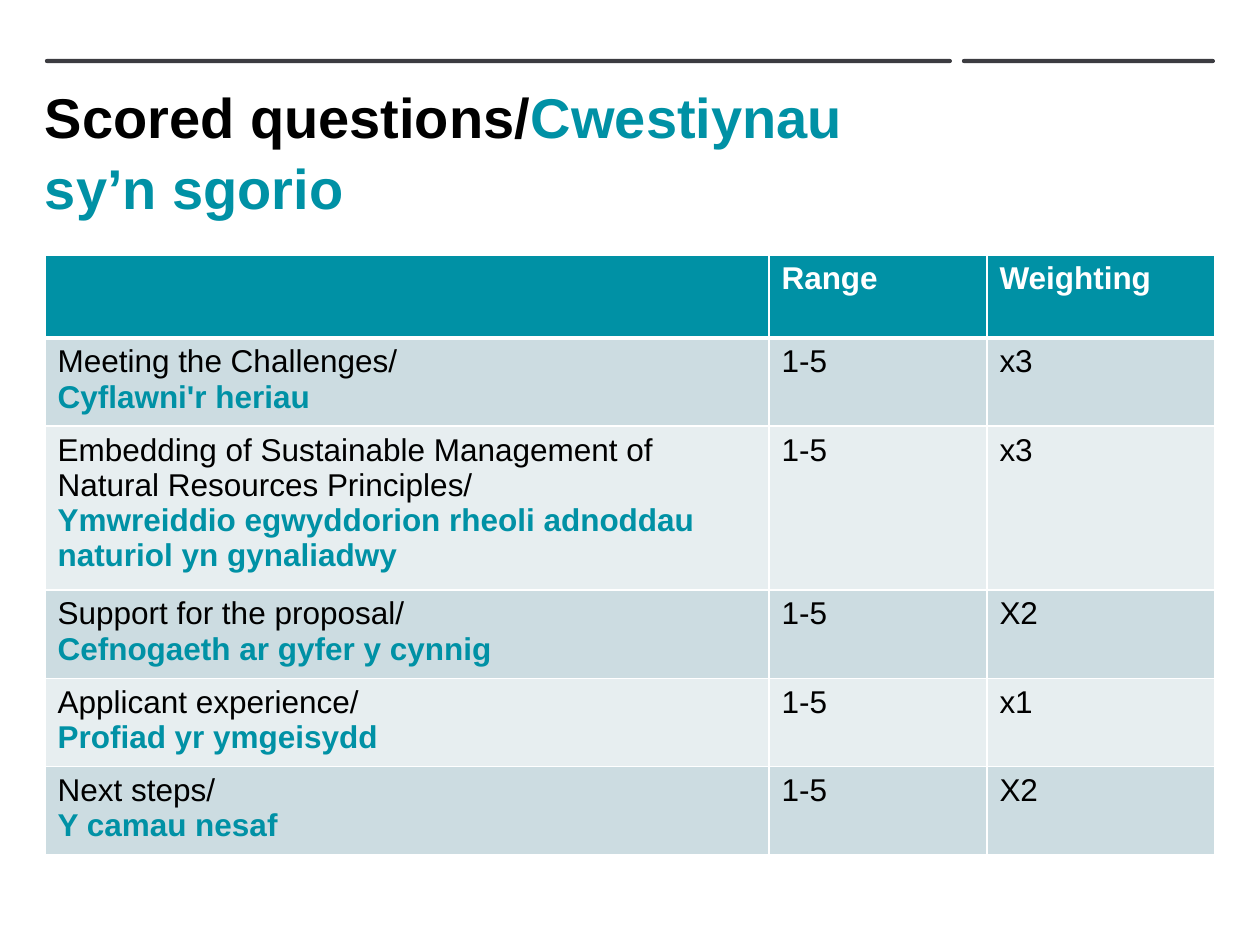
from dataclasses import dataclass

from lxml.etree import SubElement
from pptx import Presentation
from pptx.dml.color import RGBColor as RGB
from pptx.enum.shapes import MSO_SHAPE as Shape
from pptx.enum.text import MSO_ANCHOR as Anchor
from pptx.oxml.ns import qn
from pptx.util import Emu, Pt


@dataclass
class Theme:
    font = "Arial"
    title_size = Pt(32)
    table_size = Pt(18)
    teal = RGB(0x00, 0x91, 0xA5)
    black = RGB(0, 0, 0)
    white = RGB(0xFF, 0xFF, 0xFF)
    rule = RGB(0x3C, 0x3C, 0x41)
    bands = [RGB(0xCC, 0xDC, 0xE1), RGB(0xE7, 0xEE, 0xF0)]


theme = Theme()


def px(value):
    return Emu(round(value * 914400 / 126))


def style(span, size, color, bold):
    font = span.font
    font.name, font.size, font.bold = theme.font, size, bold
    font.color.rgb = color


deck = Presentation()
deck.slide_width, deck.slide_height = px(1260), px(945)
page = deck.slides.add_slide(deck.slide_layouts[6])

left = 45
for rule_left, rule_width in [(962, 253), (left, 907)]:
    rule = page.shapes.add_shape(
        Shape.ROUNDED_RECTANGLE, px(rule_left), px(59), px(rule_width), px(4))
    rule.adjustments[0] = 0.5
    rule.shadow.inherit = False
    rule.fill.solid()
    rule.fill.fore_color.rgb = theme.rule
    rule.line.fill.background()

box = page.shapes.add_textbox(px(left), px(66), px(907), px(168))
frame = box.text_frame
frame.word_wrap = True
frame.vertical_anchor = Anchor.MIDDLE
frame.margin_left = frame.margin_right = frame.margin_top = frame.margin_bottom = 0
para = frame.paragraphs[0]
para.line_spacing = 1.05
for text, color in [("Scored questions/", theme.black),
                    ("Cwestiynau sy’n sgorio", theme.teal)]:
    span = para.add_run()
    span.text = text
    style(span, theme.title_size, color, True)

rows = [
    ("", "Range", "Weighting"),
    ("Meeting the Challenges/\nCyflawni'r heriau", "1-5", "x3"),
    ("Embedding of Sustainable Management of Natural Resources Principles/\n"
     "Ymwreiddio egwyddorion rheoli adnoddau naturiol yn gynaliadwy", "1-5", "x3"),
    ("Support for the proposal/\nCefnogaeth ar gyfer y cynnig", "1-5", "X2"),
    ("Applicant experience/\nProfiad yr ymgeisydd", "1-5", "x1"),
    ("Next steps/\nY camau nesaf", "1-5", "X2"),
]
widths = [724, 218, 228]
heights = [83, 83, 154, 83, 83, 83]

table = page.shapes.add_table(
    len(rows), len(widths), px(left), px(255), px(sum(widths)), px(sum(heights))).table
for column, width in zip(table.columns, widths):
    column.width = px(width)
for row, height in zip(table.rows, heights):
    row.height = px(height)

for row_index, row in enumerate(rows):
    header = row_index == 0
    for column_index, text in enumerate(row):
        cell = table.cell(row_index, column_index)
        cell.text_frame.text = text
        for line_index, para in enumerate(cell.text_frame.paragraphs):
            welsh = line_index == 1
            color = theme.white if header else theme.teal if welsh else theme.black
            for span in para.runs:
                style(span, theme.table_size, color, header or welsh)

        properties = cell._tc.get_or_add_tcPr()
        for side in ("L", "R", "T", "B"):
            heavy = (header and side == "B") or (row_index == 1 and side == "T")
            border = SubElement(properties, qn(f"a:ln{side}"), w=str(Pt(3 if heavy else 1)))
            fill = SubElement(border, qn("a:solidFill"))
            SubElement(fill, qn("a:srgbClr"), val=str(theme.white))
        cell.fill.solid()
        cell.fill.fore_color.rgb = theme.teal if header else theme.bands[(row_index - 1) % 2]

deck.save("out.pptx")
